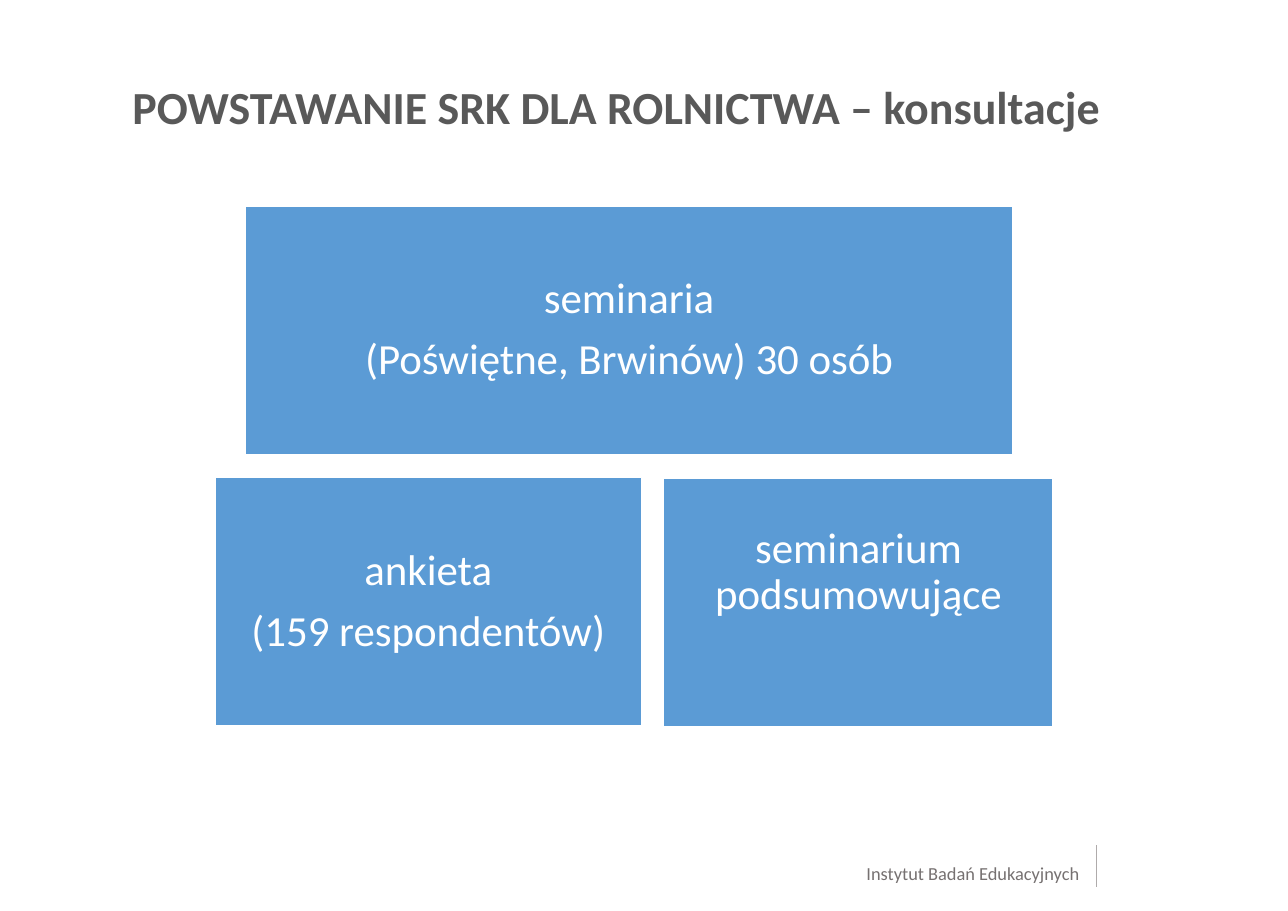
from lxml import etree
from pptx import Presentation
from pptx.dml import color
from pptx.enum import shapes, text
from pptx.oxml import ns
from pptx.util import Cm, Pt

FONT = "Calibri"
BOX_HEIGHT = 5.72
BOX_INSET = 0.3
BOXES = [
    (5.64, 4.75, 17.7, BOX_INSET, ["seminaria", "(Poświętne, Brwinów) 30 osób"]),
    (4.95, 11, 9.83, BOX_INSET, ["ankieta", "(159 respondentów)"]),
    (15.29, 11.02, 8.97, 1.7, ["seminarium podsumowujące"]),
]


def rgb(value):
    return color.RGBColor.from_string(value)


def set_insets(tf, side, bottom):
    tf.margin_left = tf.margin_top = tf.margin_right = Cm(side)
    tf.margin_bottom = Cm(bottom)


def write(p, line, size, hex_color, bold=False):
    p.text = line
    for r in p.runs:
        r.font.name = FONT
        r.font.size = Pt(size)
        r.font.bold = bold
        r.font.color.rgb = rgb(hex_color)


def add_label(slide, left, top, width, height, line, size, hex_color, bold=False):
    sp = slide.shapes.add_textbox(Cm(left), Cm(top), Cm(width), Cm(height))
    tf = sp.text_frame
    tf.word_wrap = True
    set_insets(tf, 0, 0)
    write(tf.paragraphs[0], line, size, hex_color, bold)
    return tf.paragraphs[0]


def add_box(slide, left, top, width, bottom_inset, lines):
    sp = slide.shapes.add_shape(
        shapes.MSO_SHAPE.RECTANGLE, Cm(left), Cm(top), Cm(width), Cm(BOX_HEIGHT))
    sp.shadow.inherit = False
    sp.fill.solid()
    sp.fill.fore_color.rgb = rgb("5B9BD5")
    sp.line.color.rgb = rgb("FFFFFF")
    sp.line.width = Pt(1)
    tf = sp.text_frame
    tf.word_wrap = True
    tf.vertical_anchor = text.MSO_ANCHOR.MIDDLE
    set_insets(tf, BOX_INSET, bottom_inset)
    for i, line in enumerate(lines):
        p = tf.add_paragraph() if i else tf.paragraphs[0]
        p.alignment = text.PP_ALIGN.CENTER
        p.line_spacing = 0.9
        if i:
            p.space_before = Pt(9.8)
        write(p, line, 28, "FFFFFF")


def add_rule(slide, x, top, bottom):
    line = slide.shapes.add_connector(
        shapes.MSO_CONNECTOR.STRAIGHT, Cm(x), Cm(bottom), Cm(x), Cm(top))
    line.line.color.rgb = rgb("AFABAB")
    line.line.width = Pt(0.5)
    etree.SubElement(line._element.spPr, ns.qn("a:effectLst"))


def main():
    prs = Presentation()
    prs.slide_width, prs.slide_height = Cm(29.67), Cm(20.98)
    slide = prs.slides.add_slide(prs.slide_layouts[6])
    add_label(slide, 19.96, 19.86, 5.1, 0.53, "Instytut Badań Edukacyjnych", 12, "767171")
    add_rule(slide, 25.25, 19.46, 20.42)
    title = add_label(slide, 3.05, 1.96, 25.58, 2.16,
                      "POWSTAWANIE SRK DLA ROLNICTWA – konsultacje", 30, "595959", True)
    title.line_spacing = 0.9
    for box in BOXES:
        add_box(slide, *box)
    prs.save("out.pptx")


if __name__ == "__main__":
    main()
